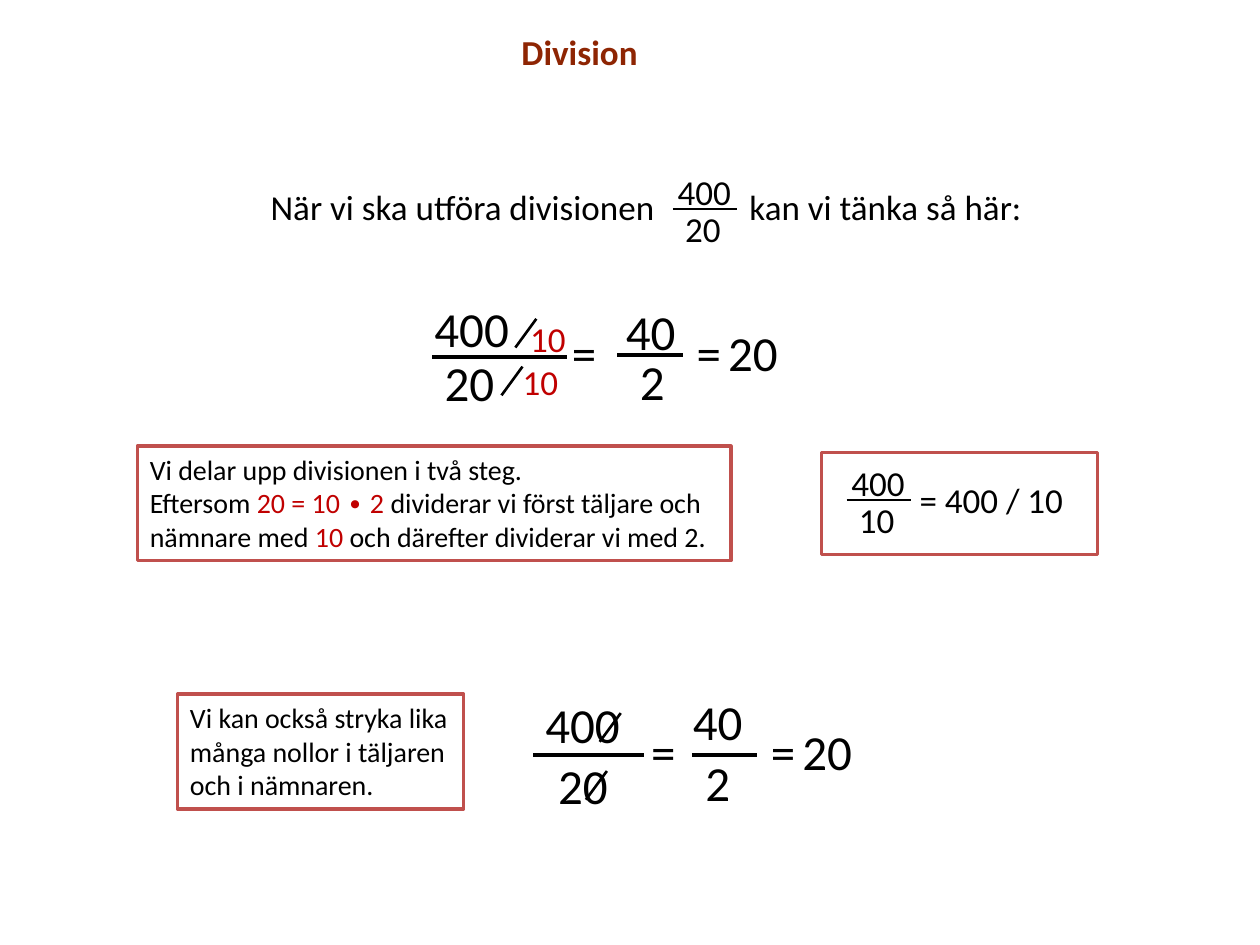
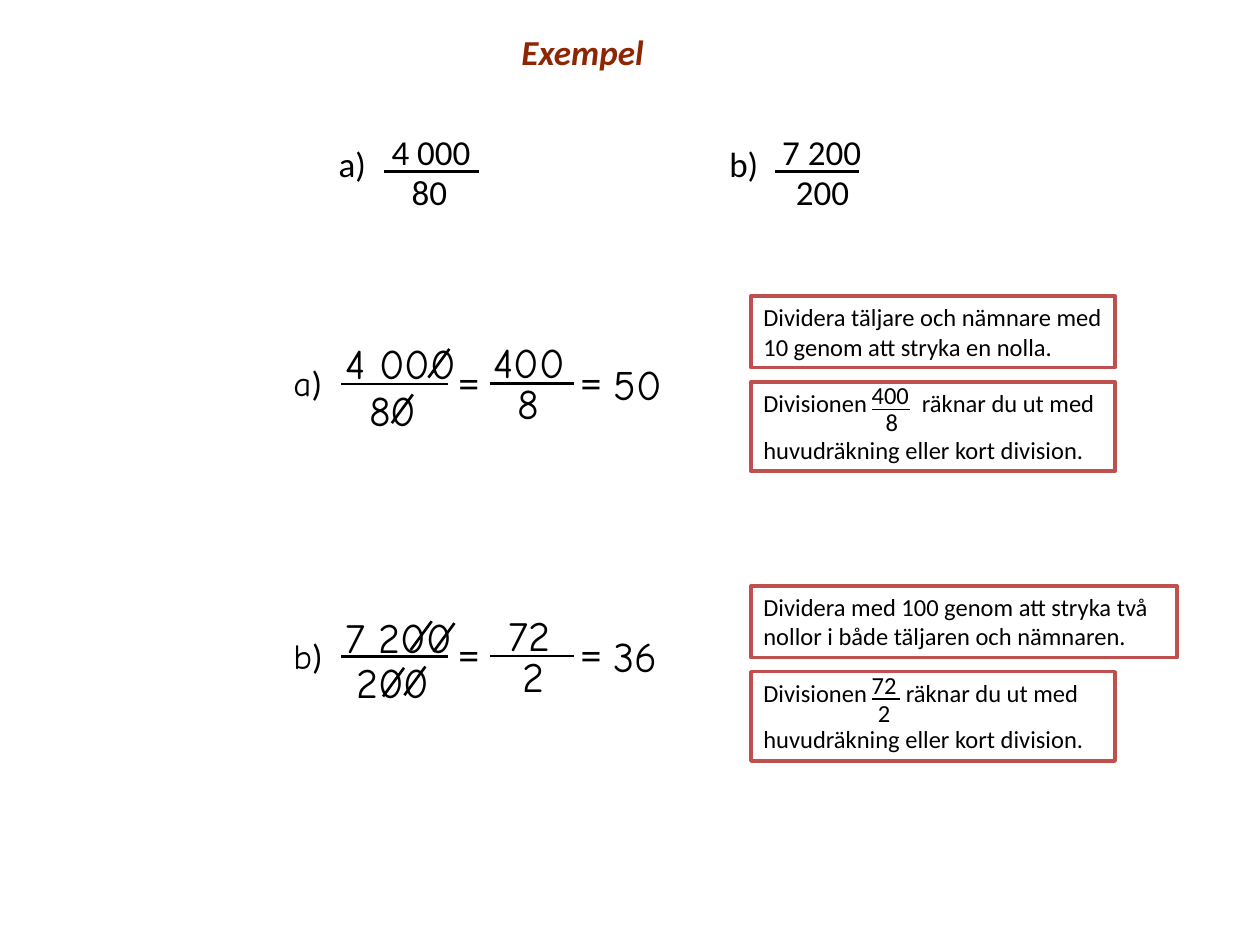
"""Build two slides that explain division by shortening fractions."""
from lxml import etree
from pptx import Presentation
from pptx.dml.color import RGBColor
from pptx.enum.shapes import MSO_CONNECTOR, MSO_SHAPE
from pptx.enum.text import MSO_ANCHOR, PP_ALIGN
from pptx.oxml.ns import qn
from pptx.util import Pt

RECT = MSO_SHAPE.RECTANGLE
STRAIGHT = MSO_CONNECTOR.STRAIGHT
TOP, LEFT = MSO_ANCHOR.TOP, PP_ALIGN.LEFT

BLACK, WHITE, RED = "000000", "FFFFFF", "C00000"
FRAME, TITLE = "C0504D", "8E2503"
BODY, HAND = "Calibri", "Comic Neue"
HEIGHTS = {14: 24.5, 20: 31.5, 24: 36.3, 28: 41.2}
SLASH_W, SLASH_H = 12, 16.4

# Labels: text, x, y, width, size, colour
DIVISION_LABELS = [
    ("När vi ska utföra divisionen", 147.6, 102.2, 269.3, 20, BLACK),
    ("kan vi tänka så här:", 421.2, 102.2, 175, 20, BLACK),
    ("=", 319.7, 180.7, 33.1, 28, BLACK),
    ("=", 391, 180.7, 33.1, 28, BLACK),
    ("20", 409, 180.7, 50.4, 28, BLACK),
    ("10", 295.9, 177.8, 50.4, 20, RED),
    ("10", 291.6, 202.3, 50.4, 20, RED),
    ("= 400 / 10", 518.4, 270, 96.5, 20, BLACK),
    ("=", 365, 409, 33.1, 28, BLACK),
    ("=", 433.4, 409, 33.1, 28, BLACK),
    ("20", 451.4, 409, 50.4, 28, BLACK),
]
# Fractions: bar x, bar y, bar length, size, bar weight,
# then text, dx, dy, width of numerator and denominator
DIVISION_FRACTIONS = [
    (384.5, 119.5, 36.7, 20, 1.5, ("400", -4.3, -25.9, 74.2), ("20", 0, -4.3, 45.4)),
    (247, 203.8, 77, 28, 2.25, ("400", -5.8, -36.8, 74.2), ("20", 0, -5.8, 45.4)),
    (352.8, 203, 37.4, 28, 2.25, ("40", -2.2, -34.5, 51.8), ("2", 5.8, -5.7, 45.4)),
    (483.8, 285.8, 36.7, 20, 1.5, ("400", -4.3, -25.9, 74.2), ("10", 0, -4.3, 45.4)),
    (304.6, 431.3, 63.3, 28, 2.25, ("400", 0, -38.2, 74.2), ("20", 7.2, -2.9, 45.4)),
    (395.3, 431.3, 37.4, 28, 2.25, ("40", -6.5, -39.6, 74.2), ("2", 0.7, -5.1, 45.4)),
]
DIVISION_SLASHES = [(286.6, 209.5), (294.5, 182.2), (334.8, 440.6), (342.7, 407.5)]
# Boxes: x, y, width, height, size, paragraphs of (text, colour) runs
DIVISION_BOXES = [
    (78.5, 254.9, 339.1, 65.5, 16, [
        [("Vi delar upp divisionen i två steg.", BLACK)],
        [("Eftersom ", BLACK), ("20 = 10 ∙ 2", RED),
         (" dividerar vi först täljare och nämnare med ", BLACK),
         ("10 ", RED), ("och därefter dividerar vi med 2.", BLACK)]]),
    (469.4, 258.5, 157.7, 58.3, 16, []),
    (101.5, 396.7, 163.4, 65.5, 16, [
        [("Vi kan också stryka lika många nollor i täljaren och i nämnaren.", BLACK)]]),
]

EXERCISES = [
    ("a)", 186.5, (219.6, 97.9, 54, 20, 1.5, ("4 000", -2.9, -26.6, 74.2), ("80", 8.6, -4.3, 45.4))),
    ("b)", 409.7, (442.8, 97.9, 48.2, 20, 1.5, ("7 200", -2.9, -26.6, 74.2), ("200", 5, -4.3, 45.4))),
]
SOLUTIONS = [
    {"letter": "a", "y": 219.4, "answer": "50",
     "start": (("4 000", -5, -30, 97.2), ("80", 8.7, -3.5, 45.4)),
     "short": (("400", -5.1, -30.6, 74.2), ("8", 8.6, -7, 59.8)),
     "slashes": [(223.9, 225.4), (244.8, 199.4)],
     "hint": "Dividera täljare och nämnare med 10 genom att stryka en nolla.",
     "hint_y": 169.2, "hint_w": 208.1, "tab": 90.6,
     "inline": (21.6, ("400", -7.2, -20.2, 36.7), ("8", 0.8, -5, 30.2))},
    {"letter": "b", "y": 375.1, "answer": "36",
     "start": (("7 200", -5, -29.5, 97.2), ("200", 1.5, -3.6, 58.3)),
     "short": (("72", 3.6, -30.2, 74.2), ("2", 11.5, -6.5, 59.8)),
     "slashes": [(231.1, 380.9), (247.7, 356.1), (218.9, 381.6), (234.7, 355)],
     "hint": "Dividera med 100 genom att stryka två nollor i både täljaren och nämnaren.",
     "hint_y": 334.8, "hint_w": 243.4, "tab": 81.4,
     "inline": (15.9, ("72", -7.2, -20.2, 36.7), ("2", -3.6, -4.3, 30.2))},
]


def rgb(value):
    return RGBColor.from_string(value)


def add_run(p, text, size, color=BLACK, font=BODY):
    r = p.add_run()
    r.text = text
    r.font.size = Pt(size)
    r.font.name = font
    r.font.color.rgb = rgb(color)
    return r


def add_label(s, text, x, y, w, size, color=BLACK, font=BODY):
    tf = s.shapes.add_textbox(Pt(x), Pt(y), Pt(w), Pt(HEIGHTS[size])).text_frame
    tf.word_wrap = True
    p = tf.paragraphs[0]
    return p, add_run(p, text, size, color, font)


def add_title(s, text, width, italic=False):
    r = add_label(s, text, 290.9, 13.7, width, 20, TITLE)[1]
    r.font.bold = True
    r.font.italic = italic


def add_line(s, x1, y1, x2, y2, weight=1.5):
    c = s.shapes.add_connector(STRAIGHT, Pt(x1), Pt(y1), Pt(x2), Pt(y2))
    c.line.color.rgb = rgb(BLACK)
    c.line.width = Pt(weight)
    etree.SubElement(c._element.spPr, qn("a:effectLst"))


def add_slashes(s, corners):
    for x, y in corners:
        add_line(s, x, y + SLASH_H, x + SLASH_W, y)


def add_fraction(s, x, y, length, size, weight, numerator, denominator, font=BODY):
    for text, dx, dy, w in (numerator, denominator):
        add_label(s, text, x + dx, y + dy, w, size, font=font)
    add_line(s, x, y, x + length, y, weight)


def add_box(s, x, y, w, h, size, paragraphs):
    sp = s.shapes.add_shape(RECT, Pt(x), Pt(y), Pt(w), Pt(h))
    sp.shadow.inherit = False
    sp.fill.solid()
    sp.fill.fore_color.rgb = rgb(WHITE)
    sp.line.color.rgb = rgb(FRAME)
    sp.line.width = Pt(2)
    tf = sp.text_frame
    tf.word_wrap = True
    tf.vertical_anchor = TOP
    for i, runs in enumerate(paragraphs):
        p = tf.add_paragraph() if i else tf.paragraphs[0]
        p.alignment = LEFT
        for text, color in runs:
            add_run(p, text, size, color)
    return tf


def add_tab_stop(p, position):
    tabs = etree.SubElement(p._p.get_or_add_pPr(), qn("a:tabLst"))
    etree.SubElement(tabs, qn("a:tab"), pos=str(Pt(position)), algn="l")


def add_solution(s, sol):
    y = sol["y"]
    p, _ = add_label(s, sol["letter"], 160.6, y - 16.2, 38.9, 20, font=HAND)
    add_run(p, ")", 20)
    add_fraction(s, 195.1, y, 61.2, 24, 1.5, *sol["start"], font=HAND)
    add_fraction(s, 280.1, y - 0.3, 48.2, 24, 1.5, *sol["short"], font=HAND)
    for x in (254.9, 324.7):
        add_label(s, "=", x, y - 19.4, 33.1, 24)
    add_label(s, sol["answer"], 343.4, y - 18.3, 50.4, 24, font=HAND)
    add_slashes(s, sol["slashes"])

    x, top = 429.1, sol["hint_y"]
    add_box(s, x, top, sol["hint_w"], 41, 14, [[(sol["hint"], BLACK)]])
    tf = add_box(s, x, top + 49, 208.1, 51.1, 14, [
        [("Divisionen\träknar du ut med", BLACK)],
        [("huvudräkning eller kort division.", BLACK)]])
    add_tab_stop(tf.paragraphs[0], sol["tab"])
    tf.paragraphs[1].space_before = Pt(9.8)
    length, numerator, denominator = sol["inline"]
    add_fraction(s, 498.2, top + 64.8, length, 14, 1, numerator, denominator)


def build_division(s):
    add_title(s, "Division", 80.6)
    for box in DIVISION_BOXES:
        add_box(s, *box)
    for label in DIVISION_LABELS:
        add_label(s, *label)
    for fraction in DIVISION_FRACTIONS:
        add_fraction(s, *fraction)
    add_slashes(s, DIVISION_SLASHES)


def build_example(s):
    add_title(s, "Exempel", 85, italic=True)
    for letter, x, fraction in EXERCISES:
        add_label(s, letter, x, 77.8, 38.9, 20)
        add_fraction(s, *fraction)
    for sol in SOLUTIONS:
        add_solution(s, sol)


def main():
    prs = Presentation()
    prs.slide_width, prs.slide_height = Pt(720), Pt(540)
    for build in (build_division, build_example):
        build(prs.slides.add_slide(prs.slide_layouts[6]))
    prs.save("out.pptx")


if __name__ == "__main__":
    main()
